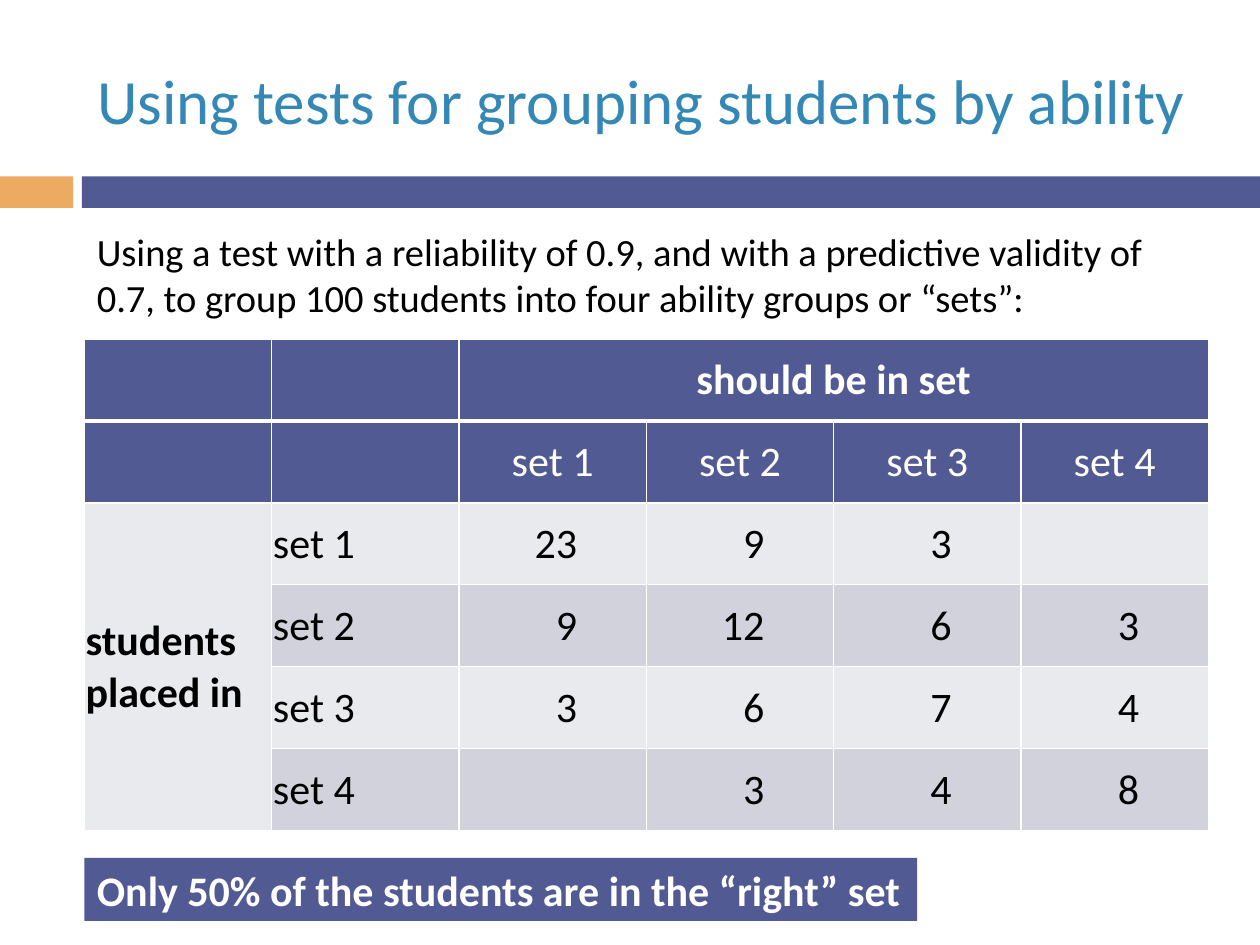
from lxml.etree import SubElement
from pptx import Presentation
from pptx.dml.color import RGBColor
from pptx.enum.shapes import MSO_SHAPE
from pptx.enum.text import MSO_ANCHOR, PP_ALIGN
from pptx.oxml.ns import qn
from pptx.util import Inches, Pt

TITLE = "Using tests for grouping students by ability"
INTRO = ("Using a test with a reliability of 0.9, and with a predictive validity of 0.7, "
         "to group 100 students into four ability groups or “sets”:")
RESULT = "Only 50% of the students are in the “right” set"
ROWS = [
    ["", "", "should be in set", "", "", ""],
    ["", "", "set 1", "set 2", "set 3", "set 4"],
    ["students placed in", "set 1", "23", "9", "3", ""],
    ["", "set 2", "9", "12", "6", "3"],
    ["", "set 3", "3", "6", "7", "4"],
    ["", "set 4", "", "3", "4", "8"],
]
MERGES = [((0, 2), (0, 5)), ((2, 0), (5, 0))]
BOLD_CELLS = [(0, 2), (2, 0)]
HEADER_ROWS, LABEL_COLS = 2, 2
C = {"title": "3488B6", "accent": "EDAA61", "main": "525A93", "light": "E9EAEE",
     "dark": "D1D2DC", "white": "FFFFFF", "black": "000000"}
FONT = "Calibri"
LEFT, WIDTH = 0.67, 8.92
ROW_H = 0.65


def rgb(name):
    return RGBColor.from_string(C[name])


def write(tf, text, size, color, bold=False, align=PP_ALIGN.LEFT):
    tf.text = text
    tf.word_wrap = True
    p = tf.paragraphs[0]
    p.alignment = align
    for r in p.runs:
        r.font.name, r.font.size, r.font.bold = FONT, Pt(size), bold
        r.font.color.rgb = rgb(color)


def box(s, x, y, w, h, color):
    sp = s.shapes.add_shape(MSO_SHAPE.RECTANGLE, Inches(x), Inches(y), Inches(w), Inches(h))
    sp.shadow.inherit = False
    sp.fill.solid()
    sp.fill.fore_color.rgb = rgb(color)
    sp.line.fill.background()
    return sp


def add_borders(cell, row):
    tcPr = cell._tc.get_or_add_tcPr()
    thick = {0: "lnB", 1: "lnT"}.get(row)
    for side in ("lnL", "lnR", "lnT", "lnB"):
        ln = SubElement(tcPr, qn(f"a:{side}"), w=str(Pt(3 if side == thick else 1)))
        fill = SubElement(ln, qn("a:solidFill"))
        SubElement(fill, qn("a:srgbClr"), val=C["white"])


def format_cell(cell, row, col, text):
    header = row < HEADER_ROWS
    value = not header and col >= LABEL_COLS
    add_borders(cell, row)
    cell.fill.solid()
    band = "light" if col == 0 or row % 2 == 0 else "dark"
    cell.fill.fore_color.rgb = rgb("main" if header else band)
    cell.vertical_anchor = MSO_ANCHOR.MIDDLE
    cell.margin_left = cell.margin_top = Inches(0.01)
    cell.margin_right = Inches(0.55 if value else 0.01)
    cell.margin_bottom = 0
    align = PP_ALIGN.CENTER if header else PP_ALIGN.RIGHT if value else PP_ALIGN.LEFT
    if text:
        write(cell.text_frame, text, 24, "white" if header else "black",
              (row, col) in BOLD_CELLS, align)


def add_grid(s):
    n_rows, n_cols = len(ROWS), len(ROWS[0])
    table = s.shapes.add_table(n_rows, n_cols, Inches(LEFT), Inches(2.69),
                               Inches(WIDTH), Inches(ROW_H * n_rows)).table
    for start, end in MERGES:
        table.cell(*start).merge(table.cell(*end))
    for i, row in enumerate(ROWS):
        for j, text in enumerate(row):
            format_cell(table.cell(i, j), i, j, text)


def main():
    prs = Presentation()
    prs.slide_width, prs.slide_height = Inches(10), Inches(7.5)
    s = prs.slides.add_slide(prs.slide_layouts[5])

    box(s, 0, 1.4, 0.58, 0.25, "accent")
    box(s, 0.65, 1.4, 9.35, 0.25, "main")

    title = s.shapes.title
    title.left, title.top = Inches(LEFT), Inches(0.25)
    title.width, title.height = Inches(WIDTH), Inches(1.08)
    title.text_frame.vertical_anchor = MSO_ANCHOR.MIDDLE
    write(title.text_frame, TITLE, 36, "title")

    add_grid(s)
    intro = s.shapes.add_textbox(Inches(LEFT), Inches(1.76), Inches(WIDTH), Inches(0.84))
    write(intro.text_frame, INTRO, 22, "black")
    result = box(s, LEFT, 6.81, 6.61, 0.5, "main")
    write(result.text_frame, RESULT, 24, "white", bold=True)

    prs.save("out.pptx")


if __name__ == "__main__":
    main()
